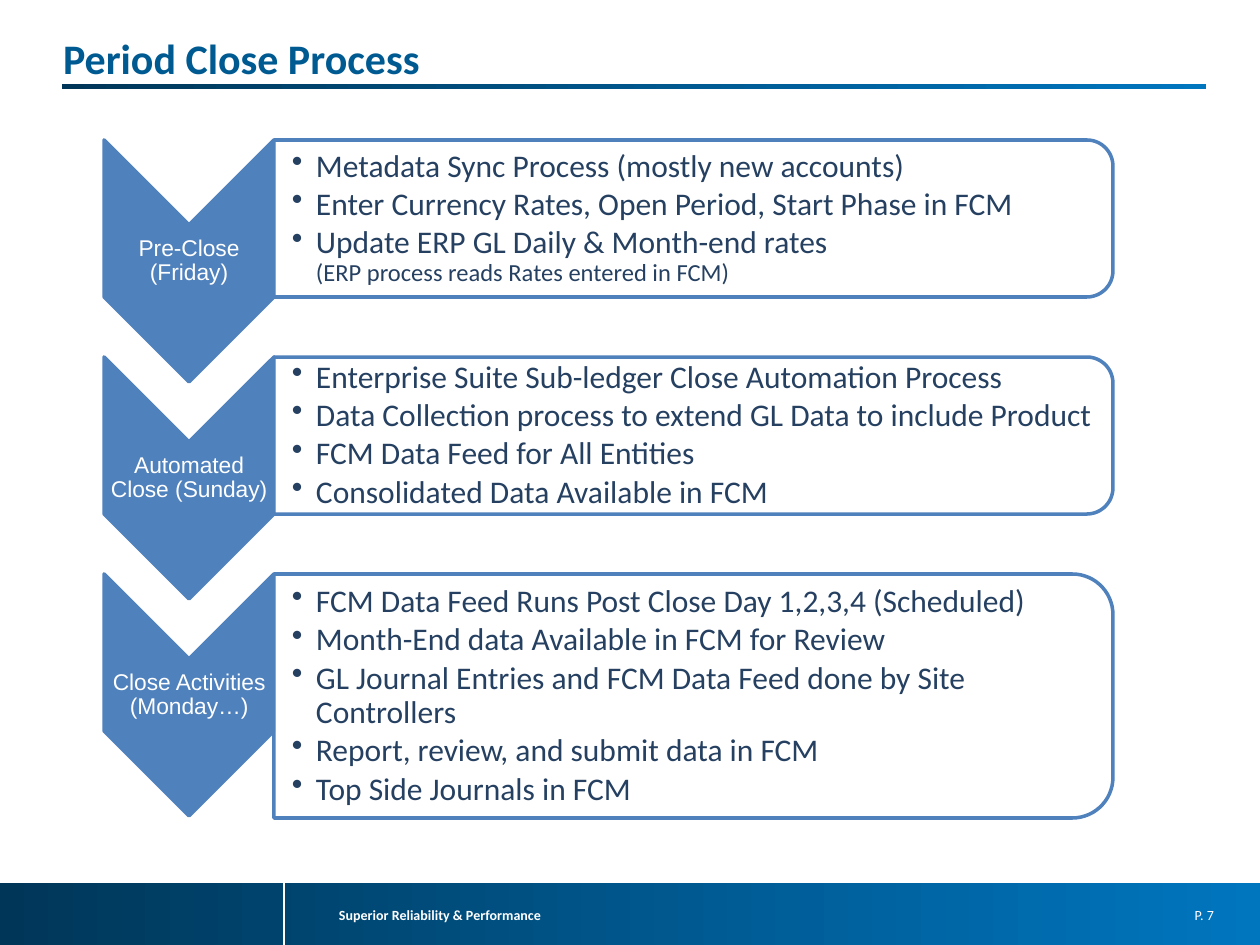
"""Build the Period Close Process slide: three chevron steps with task panels."""
import dataclasses
import math

import lxml.etree
import pptx
import pptx.dml.color
import pptx.enum.dml
import pptx.enum.shapes
import pptx.enum.text
import pptx.oxml.ns
import pptx.util

ALIGN = pptx.enum.text.PP_ALIGN
ANCHOR = pptx.enum.text.MSO_ANCHOR
qn = pptx.oxml.ns.qn


@dataclasses.dataclass(frozen=True)
class Theme:
    navy: str = "003658"
    azure: str = "0076BF"
    title: str = "005A92"
    accent: str = "4F81BD"
    text: str = "254061"
    white: str = "FFFFFF"
    head_font: str = "Calibri"
    label_font: str = "Arial"
    title_size: int = 24
    list_size: int = 18
    note_size: int = 14
    label_size: int = 13
    footer_size: int = 8


def px(n):
    return pptx.util.Emu(round(n * 914400 / 126))


def rgb(value):
    return pptx.dml.color.RGBColor.from_string(value)


def write(p, text, *, font, size, color, note_size=None, bold=False,
          align=ALIGN.LEFT, bullet=None, spacing=None, after=None):
    if bullet:
        pPr = p._p.get_or_add_pPr()
        pPr.set("marL", str(px(24)))
        pPr.set("indent", str(-px(24)))
        lxml.etree.SubElement(pPr, qn("a:buChar"), char=bullet)
    p.alignment = align
    p.line_spacing = spacing
    if after:
        p.space_after = pptx.util.Pt(after)
    for i, line in enumerate(text.split("\v")):
        if i:
            p.add_line_break()
        r = p.add_run()
        r.text = line
        r.font.name = font
        r.font.size = pptx.util.Pt(note_size if i and note_size else size)
        r.font.bold = bold
        r.font.color.rgb = rgb(color)


@dataclasses.dataclass
class Deck:
    theme: Theme
    slide: object

    def frame(self, sp, insets, anchor):
        tf = sp.text_frame
        tf.word_wrap = True
        tf.auto_size = pptx.enum.text.MSO_AUTO_SIZE.NONE
        tf.vertical_anchor = anchor
        tf.margin_left, tf.margin_top, tf.margin_right, tf.margin_bottom = map(px, insets)
        return tf

    def title(self, text, x, y, w, h):
        sp = self.slide.shapes.title
        sp.left, sp.top, sp.width, sp.height = map(px, (x, y, w, h))
        tf = self.frame(sp, (0, 0, 0, 0), ANCHOR.TOP)
        write(tf.paragraphs[0], text, font=self.theme.head_font,
              size=self.theme.title_size, color=self.theme.title, bold=True)

    def band(self, x, y, w, h):
        sp = self.slide.shapes.add_shape(
            pptx.enum.shapes.MSO_SHAPE.RECTANGLE, *map(px, (x, y, w, h)))
        sp.shadow.inherit = False
        sp.line.fill.background()
        sp.fill.gradient()
        sp.fill.gradient_angle = 0
        for i, color in enumerate((self.theme.navy, self.theme.azure)):
            stop = sp.fill.gradient_stops[i]
            stop.position = i
            stop.color.rgb = rgb(color)

    def rule(self, x1, y1, x2, y2):
        line = self.slide.shapes.add_connector(
            pptx.enum.shapes.MSO_CONNECTOR.STRAIGHT, *map(px, (x1, y1, x2, y2)))
        line.line.color.rgb = rgb(self.theme.white)
        line.line.width = pptx.util.Pt(0.75)
        lxml.etree.SubElement(line._element.spPr, qn("a:effectLst"))

    def footer(self, text, x, y, w, h, **fmt):
        sp = self.slide.shapes.add_textbox(*map(px, (x, y, w, h)))
        tf = self.frame(sp, (13, 6, 13, 6), ANCHOR.MIDDLE)
        write(tf.paragraphs[0], text, font=self.theme.head_font,
              size=self.theme.footer_size, color=self.theme.white, **fmt)

    def outline(self, points, fill):
        start, *rest = [(px(x), px(y)) for x, y in points]
        builder = self.slide.shapes.build_freeform(*start)
        builder.add_line_segments(rest, close=True)
        sp = builder.convert_to_shape()
        sp.shadow.inherit = False
        sp.fill.solid()
        sp.fill.fore_color.rgb = rgb(fill)
        sp.line.color.rgb = rgb(self.theme.accent)
        sp.line.width = pptx.util.Pt(2)
        lxml.etree.SubElement(sp.line._get_or_add_ln(), qn("a:round"))
        return sp

    def chevron(self, text, x, y, w, h):
        mid, tip = x + w / 2, w / 2
        sp = self.outline([(x, y), (mid, y + tip), (x + w, y), (x + w, y + h - tip),
                           (mid, y + h), (x, y + h - tip)], self.theme.accent)
        tf = self.frame(sp, (1, 86, 1, 86), ANCHOR.MIDDLE)
        write(tf.paragraphs[0], text, font=self.theme.label_font,
              size=self.theme.label_size, color=self.theme.white,
              align=ALIGN.CENTER, spacing=0.9)

    def panel(self, items, x, y, w, h, inset):
        radius = h / 6
        arc = [(radius * math.sin(math.radians(a)), radius * math.cos(math.radians(a)))
               for a in range(0, 91, 6)]
        cx, top, bottom = x + w - radius, y + radius, y + h - radius
        sp = self.outline([(x, y)] + [(cx + dx, top - dy) for dx, dy in arc]
                          + [(cx + dx, bottom + dy) for dx, dy in reversed(arc)]
                          + [(x, y + h)], self.theme.white)
        color = sp._element.spPr.find(qn("a:solidFill"))[0]
        lxml.etree.SubElement(color, qn("a:alpha"), val="90000")
        tf = self.frame(sp, (18, inset, inset, inset), ANCHOR.MIDDLE)
        for i, item in enumerate(items):
            p = tf.add_paragraph() if i else tf.paragraphs[0]
            write(p, item, font=self.theme.head_font, size=self.theme.list_size,
                  note_size=self.theme.note_size, color=self.theme.text,
                  bullet="•", spacing=0.9, after=2.5)


STEPS = [
    ("Pre-Close\v(Friday)", 157, 9, [
        "Metadata Sync Process (mostly new accounts)",
        "Enter Currency Rates, Open Period, Start Phase in FCM",
        "Update ERP GL Daily & Month-end rates\v(ERP process reads Rates entered in FCM)"]),
    ("Automated\vClose (Sunday)", 157, 9, [
        "Enterprise Suite Sub-ledger Close Automation Process",
        "Data Collection process to extend GL Data to include Product",
        "FCM Data Feed for All Entities",
        "Consolidated Data Available in FCM"]),
    ("Close Activities\v(Monday…)", 244, 14, [
        "FCM Data Feed Runs Post Close Day 1,2,3,4 (Scheduled)",
        "Month-End data Available in FCM for Review",
        "GL Journal Entries and FCM Data Feed done by Site Controllers",
        "Report, review, and submit data in FCM",
        "Top Side Journals in FCM"]),
]
LEFT, TOP, PITCH = 104, 140, 217
CHEVRON_W, CHEVRON_H, PANEL_W = 170, 242, 839

prs = pptx.Presentation()
prs.slide_width, prs.slide_height = px(1260), px(945)
deck = Deck(Theme(), prs.slides.add_slide(prs.slide_layouts[5]))
deck.band(0, 882, 1260, 63)
deck.footer("Superior Reliability & Performance", 326, 897, 304, 35, bold=True)
deck.footer("P. 7", 1134, 900, 93, 30, align=ALIGN.RIGHT)
deck.band(62, 84, 1144, 5)
deck.rule(284, 882, 284, 945)
deck.rule(0, 882, 1260, 882)
deck.title("Period Close Process", 63, 32, 850, 84)
for n, (label, height, inset, items) in enumerate(STEPS):
    y = TOP + n * PITCH
    deck.chevron(label, LEFT, y, CHEVRON_W, CHEVRON_H)
    deck.panel(items, LEFT + CHEVRON_W, y, PANEL_W, height, inset)
prs.save("out.pptx")
